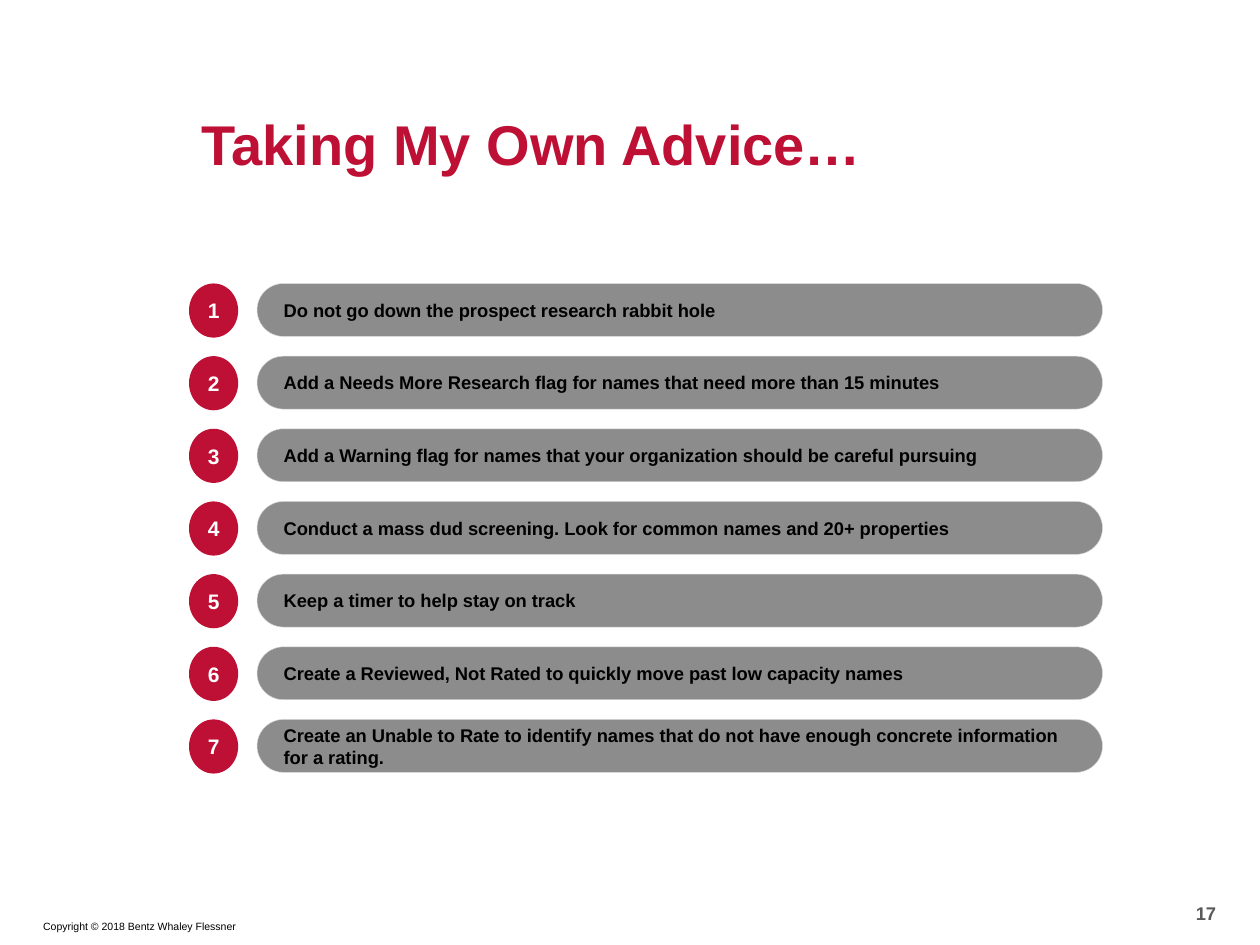
from pptx import Presentation
from pptx.dml.color import RGBColor
from pptx.enum.shapes import MSO_SHAPE
from pptx.enum.text import MSO_ANCHOR, PP_ALIGN
from pptx.util import Inches, Pt

OVAL, PILL = MSO_SHAPE.OVAL, MSO_SHAPE.ROUNDED_RECTANGLE
LEFT, CENTER, RIGHT = PP_ALIGN.LEFT, PP_ALIGN.CENTER, PP_ALIGN.RIGHT
TOP, MIDDLE = MSO_ANCHOR.TOP, MSO_ANCHOR.MIDDLE

SLIDE_W, SLIDE_H = 10, 7.5
FONT = "Arial"
COLORS = {
    "accent": "BE0F34",
    "bar": "8C8C8C",
    "bar_edge": "D9D9D9",
    "page": "595959",
    "ink": "000000",
    "paper": "FFFFFF",
}
ADVICE = [
    "Do not go down the prospect research rabbit hole",
    "Add a Needs More Research flag for names that need more than 15 minutes",
    "Add a Warning flag for names that your organization should be careful pursuing",
    "Conduct a mass dud screening. Look for common names and 20+ properties",
    "Keep a timer to help stay on track",
    "Create a Reviewed, Not Rated to quickly move past low capacity names",
    "Create an Unable to Rate to identify names that do not have enough "
    "concrete information for a rating.",
]


def color(name):
    return RGBColor.from_string(COLORS[name])


def write(holder, text, size, ink="ink", bold=True, align=LEFT, anchor=MIDDLE,
          inset_left=0.1, inset_right=0.1):
    frame = holder.text_frame
    frame.word_wrap = True
    frame.vertical_anchor = anchor
    frame.margin_left, frame.margin_right = Inches(inset_left), Inches(inset_right)
    frame.margin_top = frame.margin_bottom = Inches(0.05)
    line = frame.paragraphs[0]
    line.alignment = align
    run = line.add_run()
    run.text = text
    run.font.name, run.font.size, run.font.bold = FONT, Pt(size), bold
    run.font.color.rgb = color(ink)


def add_label(slide, box, text, size, **style):
    label = slide.shapes.add_textbox(*map(Inches, box))
    write(label, text, size, **style)


def add_block(slide, preset, box, fill, edge=None):
    block = slide.shapes.add_shape(preset, *map(Inches, box))
    block.shadow.inherit = False
    block.fill.solid()
    block.fill.fore_color.rgb = color(fill)
    if edge:
        block.line.color.rgb = color(edge)
        block.line.width = Pt(0.25)
    else:
        block.line.fill.background()
    return block


def add_advice_row(slide, box, number, advice):
    """Numbered disc at the left of the box, advice bar in the rest."""
    left, top, width, height = box
    disc_width, bar_offset = 0.39, 0.54
    disc = add_block(slide, OVAL, (left, top, disc_width, height), "accent")
    write(disc, str(number), 12, ink="paper", align=CENTER,
          inset_left=0, inset_right=0)
    bar = add_block(slide, PILL,
                    (left + bar_offset, top, width - bar_offset, height - 0.01),
                    "bar", "bar_edge")
    bar.adjustments[0] = 0.5
    write(bar, advice, 10.5, inset_left=0.15)


def add_advice_list(slide, box):
    left, top, width, height = box
    row_height = 0.43
    pitch = (height - row_height) / (len(ADVICE) - 1)
    for index, advice in enumerate(ADVICE):
        row = (left, top + index * pitch, width, row_height)
        add_advice_row(slide, row, index + 1, advice)


def add_footer(slide, box):
    left, top, width, height = box
    add_label(slide, (left + width - 2.08, top, 1.83, 0.33), "17", 10.5,
              ink="page", align=RIGHT)
    add_label(slide, (left - 0.45, top + 0.17, 2.42, height - 0.22),
              "Copyright © 2018 Bentz Whaley Flessner", 6,
              bold=False, align=RIGHT, anchor=TOP)


def main():
    deck = Presentation()
    deck.slide_width, deck.slide_height = Inches(SLIDE_W), Inches(SLIDE_H)
    slide = deck.slides.add_slide(deck.slide_layouts[6])
    margin = 0.15 * SLIDE_W
    add_footer(slide, (0, 7.08, SLIDE_W, SLIDE_H - 7.08))
    add_label(slide, (margin, 0.82, 7.75, 0.93), "Taking My Own Advice…", 32,
              ink="accent", anchor=TOP)
    add_advice_list(slide, (margin, 0.3 * SLIDE_H, 7.25, 3.89))
    deck.save("out.pptx")


if __name__ == "__main__":
    main()
